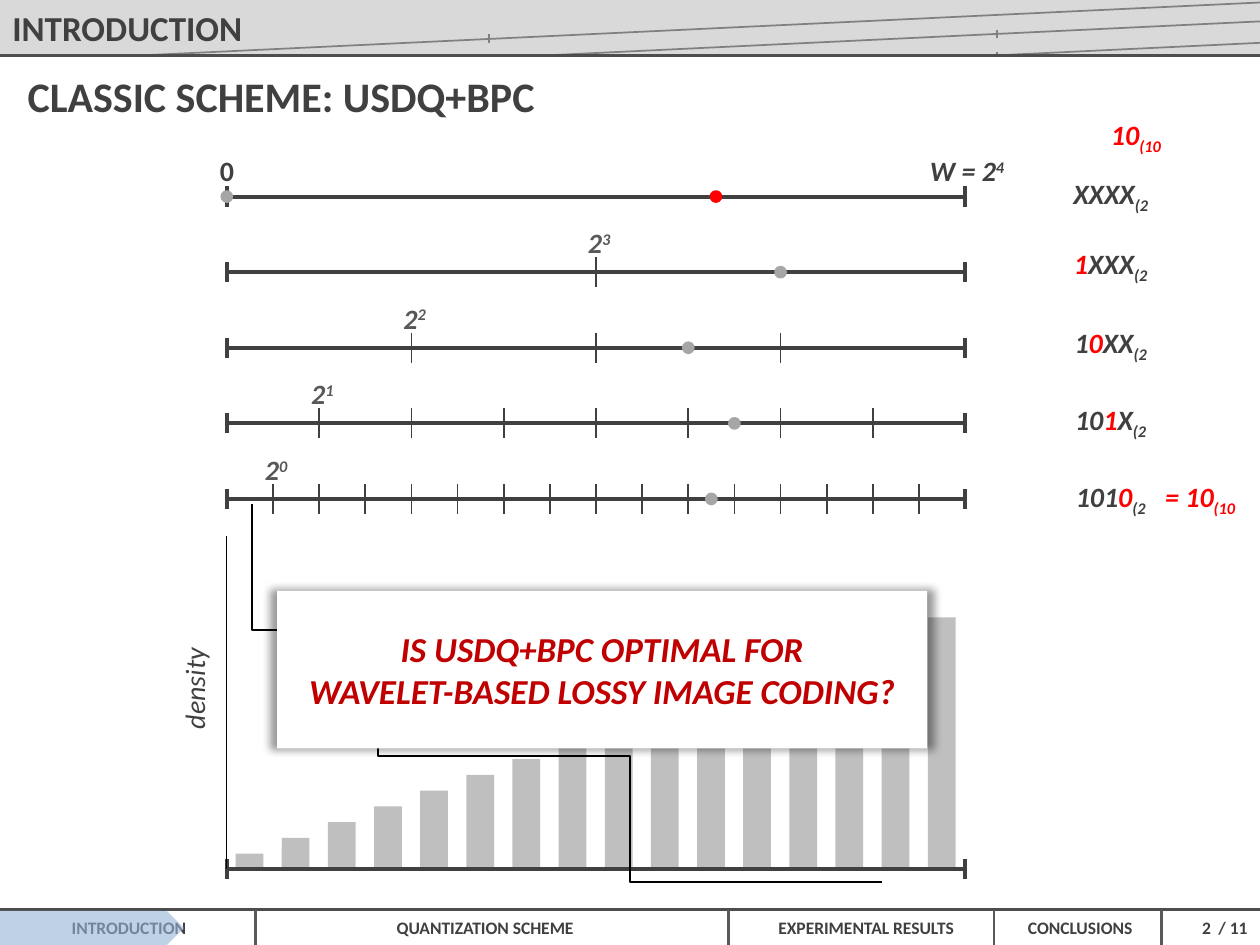
"""Build the slide on the classic USDQ+BPC scheme."""
from typing import NamedTuple, Sequence

from lxml import etree
from pptx import Presentation
from pptx.dml.color import RGBColor
from pptx.enum.shapes import MSO_CONNECTOR, MSO_SHAPE
from pptx.enum.text import MSO_ANCHOR, MSO_AUTO_SIZE, PP_ALIGN
from pptx.oxml.ns import qn
from pptx.util import Inches, Pt

STRAIGHT = MSO_CONNECTOR.STRAIGHT
RECTANGLE, ROUNDED = MSO_SHAPE.RECTANGLE, MSO_SHAPE.ROUNDED_RECTANGLE
OVAL, PENTAGON = MSO_SHAPE.OVAL, MSO_SHAPE.PENTAGON
LEFT, CENTER, RIGHT = PP_ALIGN.LEFT, PP_ALIGN.CENTER, PP_ALIGN.RIGHT
MIDDLE, NO_AUTOSIZE = MSO_ANCHOR.MIDDLE, MSO_AUTO_SIZE.NONE

COLORS = {
    "black": "000000", "white": "FFFFFF", "dark": "404040", "rule": "4D4D4D",
    "label": "595959", "ray": "808080", "dot": "A6A6A6", "bar": "BFBFBF",
    "header": "D9D9D9", "red": "FF0000", "callout": "C00000", "active": "95B3D7",
}
FONT = "Calibri"
WIDTH, HEIGHT = 10, 7.5
HEADER_BOTTOM, FOOTER_TOP = 0.44, 7.22
AXIS_LEFT, AXIS_RIGHT, CELLS = 1.8, 7.66, 16
CELL = (AXIS_RIGHT - AXIS_LEFT) / CELLS
FIRST_ROW, ROW_STEP = 1.56, 0.6
CHART_TOP, CHART_BOTTOM = 4.25, 6.9
BAR_WIDTH, BAR_STEP = 0.22, 0.125
LABEL_HEIGHT = 0.37
SUPERSCRIPT, SUBSCRIPT = 30, -25


class Box(NamedTuple):
    """Left, top, width and height in inches."""
    left: float
    top: float
    width: float
    height: float


class Run(NamedTuple):
    """Text with its colour and baseline shift in percent."""
    text: str
    color: str = "dark"
    baseline: int = 0


class Style(NamedTuple):
    """Size, emphasis and alignment of a text."""
    size: float = 16
    bold: bool = True
    italic: bool = True
    alignment: PP_ALIGN = CENTER


class Scale(NamedTuple):
    """Dots by column, and the code beside one bit-plane axis."""
    dots: Sequence[tuple[float, str]]
    code_top: float
    code: Sequence[Run]


class FooterItem(NamedTuple):
    """Text, left edge, width and alignment of a footer entry."""
    text: str
    left: float
    width: float
    alignment: PP_ALIGN = LEFT


SCALES = [
    Scale([(10.6, "red"), (0, "dot")], 1.37, [Run("XXXX")]),
    Scale([(12, "dot")], 1.92, [Run("1", "red"), Run("XXX")]),
    Scale([(10, "dot")], 2.55, [Run("1"), Run("0", "red"), Run("XX")]),
    Scale([(11, "dot")], 3.16, [Run("10"), Run("1", "red"), Run("X")]),
    Scale([(10.5, "dot")], 3.77, [Run("101"), Run("0", "red")]),
]
FOOTER = [
    FooterItem("INTRODUCTION", 0.47, 1.12),
    FooterItem("QUANTIZATION SCHEME", 3.05, 1.64),
    FooterItem("EXPERIMENTAL RESULTS", 6.08, 1.64),
    FooterItem("CONCLUSIONS", 8.06, 1.05),
    FooterItem("2", 9.44, 0.27, RIGHT),
    FooterItem("/ 11", 9.56, 0.44, RIGHT),
]
SEPARATORS = [2.03, 5.78, 7.89, 9.22]
HEADER_RAYS = [(1.12, 0.02), (4.33, 0.17), (7.9, 0.34)]
HEADER_TICKS = [(3.88, 0.27, 0.34), (7.91, 0.24, 0.3), (7.91, 0.41, 0.44)]
CURVE = [(1.81, 4.29), (1.87, 5.59), (4.11, 6.64), (7.39, 6.9)]
CURVE_STEPS = 40


def rgb(name: str) -> RGBColor:
    """Return a named colour."""
    return RGBColor.from_string(COLORS[name])


def column(index: float) -> float:
    """Return the x position of an axis column."""
    return AXIS_LEFT + CELL * index


def row(index: float) -> float:
    """Return the y position of an axis row."""
    return FIRST_ROW + ROW_STEP * index


def inches(box: Box) -> list[int]:
    """Convert a box to slide units."""
    return [Inches(length) for length in box]


def fill_text(shape, lines: Sequence[Sequence[Run]], style: Style, wrap: bool = False) -> None:
    """Write lines of runs into a shape."""
    frame = shape.text_frame
    frame.auto_size, frame.word_wrap, frame.vertical_anchor = NO_AUTOSIZE, wrap, MIDDLE
    for index, parts in enumerate(lines):
        paragraph = frame.add_paragraph() if index else frame.paragraphs[0]
        paragraph.alignment = style.alignment
        for part in parts:
            run = paragraph.add_run()
            run.text = part.text
            font = run.font
            font.name, font.size = FONT, Pt(style.size)
            font.bold, font.italic = style.bold, style.italic
            font.color.rgb = rgb(part.color)
            if part.baseline:
                run._r.get_or_add_rPr().set("baseline", str(part.baseline * 1000))


def add_text(slide, box: Box, runs: Sequence[Run], style: Style = Style()):
    """Add a one-line text box."""
    shape = slide.shapes.add_textbox(*inches(box))
    fill_text(shape, [runs], style)
    return shape


def add_line(slide, x1: float, y1: float, x2: float, y2: float, color: str, weight: float) -> None:
    """Add a straight line without shadow."""
    line = slide.shapes.add_connector(STRAIGHT, *inches(Box(x1, y1, x2, y2)))
    line.line.color.rgb, line.line.width = rgb(color), Pt(weight)
    etree.SubElement(line._element.spPr, qn("a:effectLst"))


def add_block(slide, kind: MSO_SHAPE, box: Box, color: str):
    """Add a filled shape without outline or shadow."""
    shape = slide.shapes.add_shape(kind, *inches(box))
    shape.shadow.inherit = False
    shape.fill.solid()
    shape.fill.fore_color.rgb = rgb(color)
    shape.line.fill.background()
    return shape


def add_axis(slide, y: float) -> None:
    """Add a horizontal axis with end stops."""
    add_line(slide, AXIS_LEFT, y, AXIS_RIGHT, y, "dark", 2.25)
    for x in (AXIS_LEFT, AXIS_RIGHT):
        add_line(slide, x, y - 0.08, x, y + 0.08, "dark", 2.25)


def add_scale(slide, level: int, scale: Scale) -> None:
    """Add one bit-plane axis with ticks, label, dots and code."""
    y, step = row(level), CELLS >> level
    add_axis(slide, y)
    for index in range(step, CELLS, step):
        add_line(slide, column(index), y - 0.12, column(index), y + 0.12, "dark", 1)
    if level:
        label = [Run("2", "label"), Run(str(4 - level), "label", SUPERSCRIPT)]
        add_text(slide, Box(column(step) - 0.17, y - 0.42, 0.39, LABEL_HEIGHT), label)
    for position, color in scale.dots:
        dot = add_block(slide, OVAL, Box(column(position) - 0.04, y - 0.04, 0.08, 0.08), color)
        dot.line.color.rgb, dot.line.width = rgb(color), Pt(1.5)
    code = [*scale.code, Run("(2", "dark", SUBSCRIPT)]
    add_text(slide, Box(8.41, scale.code_top, 0.81, LABEL_HEIGHT), code)


def curve_point(share: float) -> tuple[float, float]:
    """Return a point on the cubic density curve."""
    rest = 1 - share
    weights = (rest ** 3, 3 * rest ** 2 * share, 3 * rest * share ** 2, share ** 3)
    x, y = (sum(w * p[axis] for w, p in zip(weights, CURVE)) for axis in (0, 1))
    return x, y


def add_density_chart(slide) -> None:
    """Add the bars, the axes and the density curve."""
    for index in range(CELLS):
        height = BAR_STEP * (index + 1)
        box = Box(column(index) + 0.07, CHART_BOTTOM - height, BAR_WIDTH, height)
        add_block(slide, ROUNDED, box, "bar").adjustments[0] = 0.005
    add_axis(slide, CHART_BOTTOM)
    add_line(slide, AXIS_LEFT, CHART_TOP, AXIS_LEFT, CHART_BOTTOM, "black", 0.75)
    points = [curve_point(step / CURVE_STEPS) for step in range(CURVE_STEPS + 1)]
    builder = slide.shapes.build_freeform(*points[0], scale=float(Inches(1)))
    builder.add_line_segments(points[1:], close=False)
    curve = builder.convert_to_shape()
    curve.shadow.inherit = False
    curve.fill.background()
    curve.line.color.rgb, curve.line.width = rgb("black"), Pt(0.75)
    label = add_text(slide, Box(1.1, 5.28, 0.88, LABEL_HEIGHT), [Run("density")], Style(bold=False))
    label.rotation = 270


def add_callout(slide) -> None:
    """Add the question on a white panel with a soft shadow."""
    panel = add_block(slide, RECTANGLE, Box(2.2, 4.69, 5.16, 1.25), "white")
    lines = ["IS USDQ+BPC OPTIMAL FOR", "WAVELET-BASED LOSSY IMAGE CODING?"]
    fill_text(panel, [[Run(line, "callout")] for line in lines], Style(20), wrap=True)
    effects = panel._element.spPr.find(qn("a:effectLst"))
    shadow = etree.SubElement(effects, qn("a:outerShdw"), blurRad=str(Pt(5)), sx="102000",
                              sy="102000", algn="ctr", rotWithShape="0")
    color = etree.SubElement(shadow, qn("a:srgbClr"), val=COLORS["black"])
    etree.SubElement(color, qn("a:alpha"), val="40000")


def add_header(slide) -> None:
    """Add the header band, its rays and both headings."""
    add_block(slide, RECTANGLE, Box(0, 0, WIDTH, HEADER_BOTTOM), "header")
    for start, end in HEADER_RAYS:
        add_line(slide, start, HEADER_BOTTOM, WIDTH, end, "ray", 1)
    for x, top, bottom in HEADER_TICKS:
        add_line(slide, x, top, x, bottom, "ray", 1)
    add_line(slide, 0, HEADER_BOTTOM, WIDTH, HEADER_BOTTOM, "rule", 1.5)
    add_text(slide, Box(0, 0, 2.04, HEADER_BOTTOM), [Run("INTRODUCTION")], Style(20, True, False, LEFT))
    title = slide.shapes.title
    title.left, title.top, title.width, title.height = inches(Box(0.12, 0.51, 4.42, 0.5))
    fill_text(title, [[Run("CLASSIC SCHEME: USDQ+BPC")]], Style(24, True, False, LEFT))


def add_footer(slide) -> None:
    """Add the section bar with the active section marked."""
    add_line(slide, 0, FOOTER_TOP, WIDTH, FOOTER_TOP, "rule", 1.5)
    for x in SEPARATORS:
        add_line(slide, x, FOOTER_TOP, x, HEIGHT, "label", 1.5)
    for item in FOOTER:
        box = Box(item.left, 7.23, item.width, 0.27)
        add_text(slide, box, [Run(item.text)], Style(10, True, False, item.alignment))
    marker = add_block(slide, PENTAGON, Box(0, 7.23, 1.46, 0.27), "active")
    color = marker._element.spPr.find(qn("a:solidFill"))[0]
    etree.SubElement(color, qn("a:alpha"), val="60000")


def main() -> None:
    """Build and save the presentation."""
    presentation = Presentation()
    presentation.slide_width, presentation.slide_height = Inches(WIDTH), Inches(HEIGHT)
    slide = presentation.slides.add_slide(presentation.slide_layouts[5])
    add_header(slide)
    for level, scale in enumerate(SCALES):
        add_scale(slide, level, scale)
    add_text(slide, Box(1.64, 1.17, 0.32, LABEL_HEIGHT), [Run("0")], Style(italic=False))
    add_text(slide, Box(7.27, 1.17, 0.81, LABEL_HEIGHT), [Run("W = 2"), Run("4", "dark", SUPERSCRIPT)])
    for text, left, top, width in (("10", 8.7, 0.9, 0.63), ("= 10", 9.13, 3.77, 0.79)):
        runs = [Run(text, "red"), Run("(10", "red", SUBSCRIPT)]
        add_text(slide, Box(left, top, width, LABEL_HEIGHT), runs)
    add_density_chart(slide)
    add_callout(slide)
    add_footer(slide)
    presentation.save("out.pptx")


if __name__ == "__main__":
    main()
